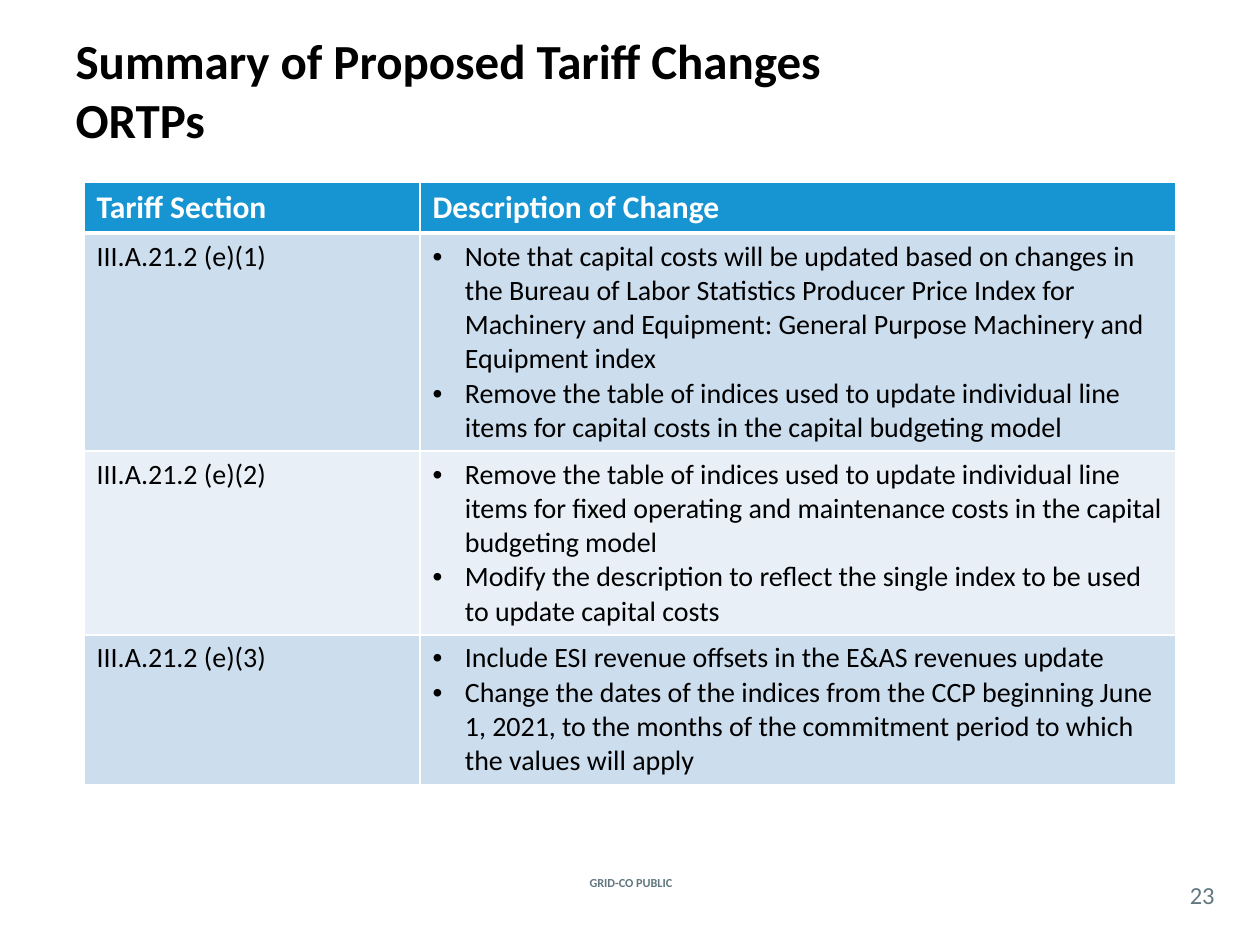
from lxml import etree
from pptx import Presentation
from pptx.dml.color import RGBColor
from pptx.enum.text import MSO_ANCHOR as Anchor, MSO_AUTO_SIZE as AutoSize, PP_ALIGN as Align
from pptx.oxml.ns import qn
from pptx.util import Pt

BLACK, WHITE, GRAY = "000000", "FFFFFF", "62777F"
HEADER_FILL, BANDS = "1795D2", ("CCDDEE", "E8EFF7")

HEADINGS = ("Tariff Section", "Description of Change")
CHANGES = [
    ("III.A.21.2 (e)(1)", [
        "Note that capital costs will be updated based on changes in the Bureau of Labor "
        "Statistics Producer Price Index for Machinery and Equipment: General Purpose "
        "Machinery and Equipment index",
        "Remove the table of indices used to update individual line items for capital costs "
        "in the capital budgeting model"]),
    ("III.A.21.2 (e)(2)", [
        "Remove the table of indices used to update individual line items for fixed operating "
        "and maintenance costs in the capital budgeting model",
        "Modify the description to reflect the single index to be used to update capital costs"]),
    ("III.A.21.2 (e)(3)", [
        "Include ESI revenue offsets in the E&AS revenues update",
        "Change the dates of the indices from the CCP beginning June 1, 2021, to the months "
        "of the commitment period to which the values will apply"]),
]


def color(value):
    return RGBColor.from_string(value)


class SlideBuilder:
    font_name = "Calibri"
    bullet_indent = Pt(18.5)

    def __init__(self, deck):
        self.page = deck.slides.add_slide(deck.slide_layouts[5])

    def style(self, para, size, hue, bold=False):
        para.font.name = self.font_name
        para.font.size = Pt(size)
        para.font.bold = bold
        para.font.color.rgb = color(hue)

    def title(self, text, left, top, width, height):
        box = self.page.shapes.title
        box.left, box.top, box.width, box.height = map(Pt, (left, top, width, height))
        frame = box.text_frame
        frame.text = text
        frame.auto_size = AutoSize.NONE
        frame.vertical_anchor = Anchor.MIDDLE
        para = frame.paragraphs[0]
        para.alignment = Align.LEFT
        self.style(para, 28, BLACK, bold=True)

    def label(self, text, left, top, width, height, size, bold=False):
        box = self.page.shapes.add_textbox(*map(Pt, (left, top, width, height)))
        frame = box.text_frame
        frame.word_wrap = True
        frame.vertical_anchor = Anchor.MIDDLE
        frame.margin_left = frame.margin_right = frame.margin_top = frame.margin_bottom = 0
        para = frame.paragraphs[0]
        para.text = text
        para.alignment = Align.CENTER
        self.style(para, size, GRAY, bold)

    def bullet(self, para):
        props = para._p.get_or_add_pPr()
        props.set("marL", str(self.bullet_indent))
        props.set("indent", str(-self.bullet_indent))
        etree.SubElement(props, qn("a:buFont")).set("typeface", "Arial")
        etree.SubElement(props, qn("a:buChar")).set("char", "•")

    def borders(self, cell, bottom=1):
        # Borders come before the fill in the cell properties
        props = cell._tc.get_or_add_tcPr()
        for index, (side, width) in enumerate((("L", 1), ("R", 1), ("T", 1), ("B", bottom))):
            line = etree.Element(qn(f"a:ln{side}"), w=str(Pt(width)))
            fill = etree.SubElement(line, qn("a:solidFill"))
            etree.SubElement(fill, qn("a:srgbClr")).set("val", WHITE)
            props.insert(index, line)

    def cell(self, cell, lines, fill, size, hue, bold=False, bulleted=False, bottom=1):
        cell.fill.solid()
        cell.fill.fore_color.rgb = color(fill)
        self.borders(cell, bottom)
        cell.text = "\n".join(lines)
        for para in cell.text_frame.paragraphs:
            if bulleted:
                self.bullet(para)
            self.style(para, size, hue, bold)

    def table(self, left, top, widths, header_height, row_height, height):
        frame = self.page.shapes.add_table(len(CHANGES) + 1, len(widths), Pt(left), Pt(top),
                                           Pt(sum(widths)), Pt(height))
        table = frame.table
        for column, width in zip(table.columns, widths):
            column.width = Pt(width)
        for index, row in enumerate(table.rows):
            row.height = Pt(row_height if index else header_height)
        frame.height = Pt(height)
        for index, heading in enumerate(HEADINGS):
            self.cell(table.cell(0, index), [heading], HEADER_FILL, 18, WHITE,
                      bold=True, bottom=3)
        for index, (section, notes) in enumerate(CHANGES):
            fill = BANDS[index % 2]
            self.cell(table.cell(index + 1, 0), [section], fill, 16, BLACK)
            self.cell(table.cell(index + 1, 1), notes, fill, 16, BLACK, bulleted=True)


def main():
    deck = Presentation()
    deck.slide_width, deck.slide_height = Pt(720), Pt(540)
    slide = SlideBuilder(deck)

    # Title
    slide.title("Summary of Proposed Tariff Changes \vORTPs", 36, 6, 648, 90)

    # Tariff changes by section
    slide.table(48, 104, (192, 432), 29.2, 48, 339)

    # Footer and page number
    slide.label("GRID-CO PUBLIC", 307.5, 498, 106, 12.5, 7, bold=True)
    slide.label("23", 672, 501, 30, 21, 14)

    deck.save("out.pptx")


if __name__ == "__main__":
    main()
